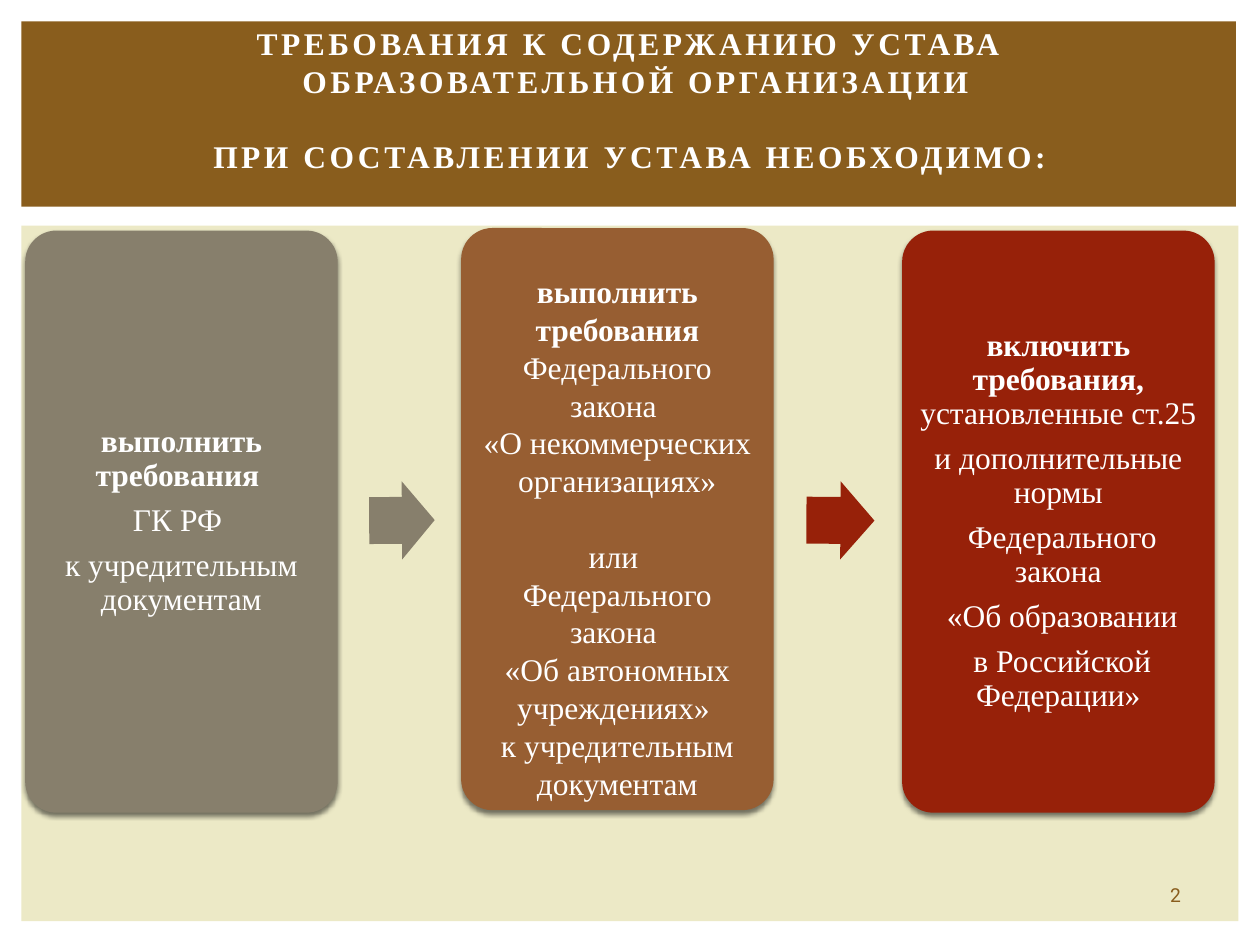
"""Builds a slide on the requirements for the charter of an educational organisation."""
from dataclasses import dataclass, field

from lxml import etree
from pptx import Presentation
from pptx import util as u
from pptx.dml.color import RGBColor
from pptx.enum import shapes, text
from pptx.oxml.ns import qn

COLORS = {
    "panel": "ECE9C6",
    "banner": "895D1D",
    "olive": "877F6C",
    "brown": "975E32",
    "red": "972109",
    "white": "FFFFFF",
    "shadow": "000000",
}
LINE_GAP = 21.6
CARD_SIZE = (2.48, 4.62)


@dataclass
class SlideStyle:
    slide: object
    font: str = "Times New Roman"
    number_font: str = "Roboto"
    size: float = 18
    colors: dict = field(default_factory=lambda: COLORS)

    def color(self, name):
        return RGBColor.from_string(self.colors[name])

    def format_span(self, span, bold=False):
        span.font.name = self.font
        span.font.size = u.Pt(self.size)
        span.font.bold = bold
        span.font.color.rgb = self.color("white")

    def block(self, kind, place, fill):
        shape = self.slide.shapes.add_shape(kind, *map(u.Inches, place))
        shape.shadow.inherit = False
        shape.fill.solid()
        shape.fill.fore_color.rgb = self.color(fill)
        shape.line.fill.background()
        return shape

    def panel(self, place, fill):
        return self.block(shapes.MSO_SHAPE.RECTANGLE, place, fill)

    def arrow(self, place, fill, rotation):
        arrow = self.block(shapes.MSO_SHAPE.RIGHT_ARROW, place, fill)
        arrow.adjustments[0] = 0.6
        arrow.adjustments[1] = 0.5
        arrow.rotation = rotation

    def cast_shadow(self, shape):
        effects = shape._element.spPr.find(qn("a:effectLst"))
        shadow = etree.SubElement(
            effects, qn("a:outerShdw"), blurRad=str(u.Pt(2.5)), dist=str(u.Pt(2)),
            dir="5400000", rotWithShape="0")
        tint = etree.SubElement(shadow, qn("a:srgbClr"), val=self.colors["shadow"])
        etree.SubElement(tint, qn("a:alpha"), val="50000")

    def card(self, left, top, fill, lead, lines, spacing=0.9, after=6.3,
             insets=(0.07, 0.07), gap_line=None):
        card = self.block(shapes.MSO_SHAPE.ROUNDED_RECTANGLE, (left, top, *CARD_SIZE), fill)
        card.adjustments[0] = 0.1
        self.cast_shadow(card)
        frame = card.text_frame
        frame.word_wrap = True
        frame.vertical_anchor = text.MSO_ANCHOR.MIDDLE
        frame.margin_left = frame.margin_right = u.Inches(0.07)
        frame.margin_top, frame.margin_bottom = map(u.Inches, insets)
        frame.text = "\n".join([lead, *lines[1:]])
        if lines[0]:
            frame.paragraphs[0].add_run().text = lines[0]
        for index, para in enumerate(frame.paragraphs):
            para.alignment = text.PP_ALIGN.CENTER
            para.line_spacing = spacing
            para.space_after = u.Pt(after)
            if index == gap_line:
                para.space_before = u.Pt(LINE_GAP)
            for position, span in enumerate(para.runs):
                self.format_span(span, bold=index == position == 0)

    def title(self, place, lines):
        title = self.slide.shapes.title
        title.left, title.top, title.width, title.height = map(u.Inches, place)
        frame = title.text_frame
        frame.word_wrap = True
        frame.auto_size = text.MSO_AUTO_SIZE.NONE
        frame.vertical_anchor = text.MSO_ANCHOR.MIDDLE
        frame.text = "\n".join(lines)
        for para in frame.paragraphs:
            para.alignment = text.PP_ALIGN.CENTER
            para.space_before = u.Pt(0)
            for span in para.runs:
                self.format_span(span, bold=True)
                span.font._element.set("spc", "200")
        frame.paragraphs[-1].space_before = u.Pt(LINE_GAP)
        self.slide.shapes._spTree.append(title._element)

    def page_number(self, place, number):
        box = self.slide.shapes.add_textbox(*map(u.Inches, place))
        frame = box.text_frame
        frame.word_wrap = True
        frame.vertical_anchor = text.MSO_ANCHOR.MIDDLE
        frame.text = number
        para = frame.paragraphs[0]
        para.alignment = text.PP_ALIGN.CENTER
        font = para.runs[0].font
        font.name, font.size = self.number_font, u.Pt(11)
        font.color.rgb = self.color("banner")


def main():
    deck = Presentation()
    deck.slide_width, deck.slide_height = u.Inches(10), u.Inches(7.5)
    page = SlideStyle(deck.slides.add_slide(deck.slide_layouts[5]))

    page.panel((0.17, 1.79, 9.66, 5.52), "panel")
    page.panel((0.17, 0.17, 9.64, 1.47), "banner")

    page.card(0.2, 1.83, "olive", "выполнить требования ",
              ["", "ГК РФ ", "к учредительным документам"])
    page.arrow((2.93, 3.82, 0.52, 0.62), "olive", 359.6)
    page.card(3.66, 1.81, "brown", "выполнить требования ",
              ["Федерального закона ", "«О некоммерческих организациях»", "или ",
               "Федерального закона ", "«Об автономных учреждениях» ",
               "к учредительным документам"],
              spacing=1, after=0, insets=(0.28, 0), gap_line=2)
    page.arrow((6.4, 3.82, 0.54, 0.62), "red", 0.4)
    page.card(7.16, 1.83, "red", "включить требования, ",
              ["установленные ст.25", "и дополнительные нормы", " Федерального закона",
               " «Об образовании", " в Российской Федерации»"])

    page.title((0, 0.13, 10, 1.32),
               ["ТРЕБОВАНИЯ К СОДЕРЖАНИЮ УСТАВА\v ОБРАЗОВАТЕЛЬНОЙ ОРГАНИЗАЦИИ",
                "ПРИ СОСТАВЛЕНИИ УСТАВА НЕОБХОДИМО:"])
    page.page_number((9.01, 6.95, 0.64, 0.3), "2")
    deck.save("out.pptx")


if __name__ == "__main__":
    main()
